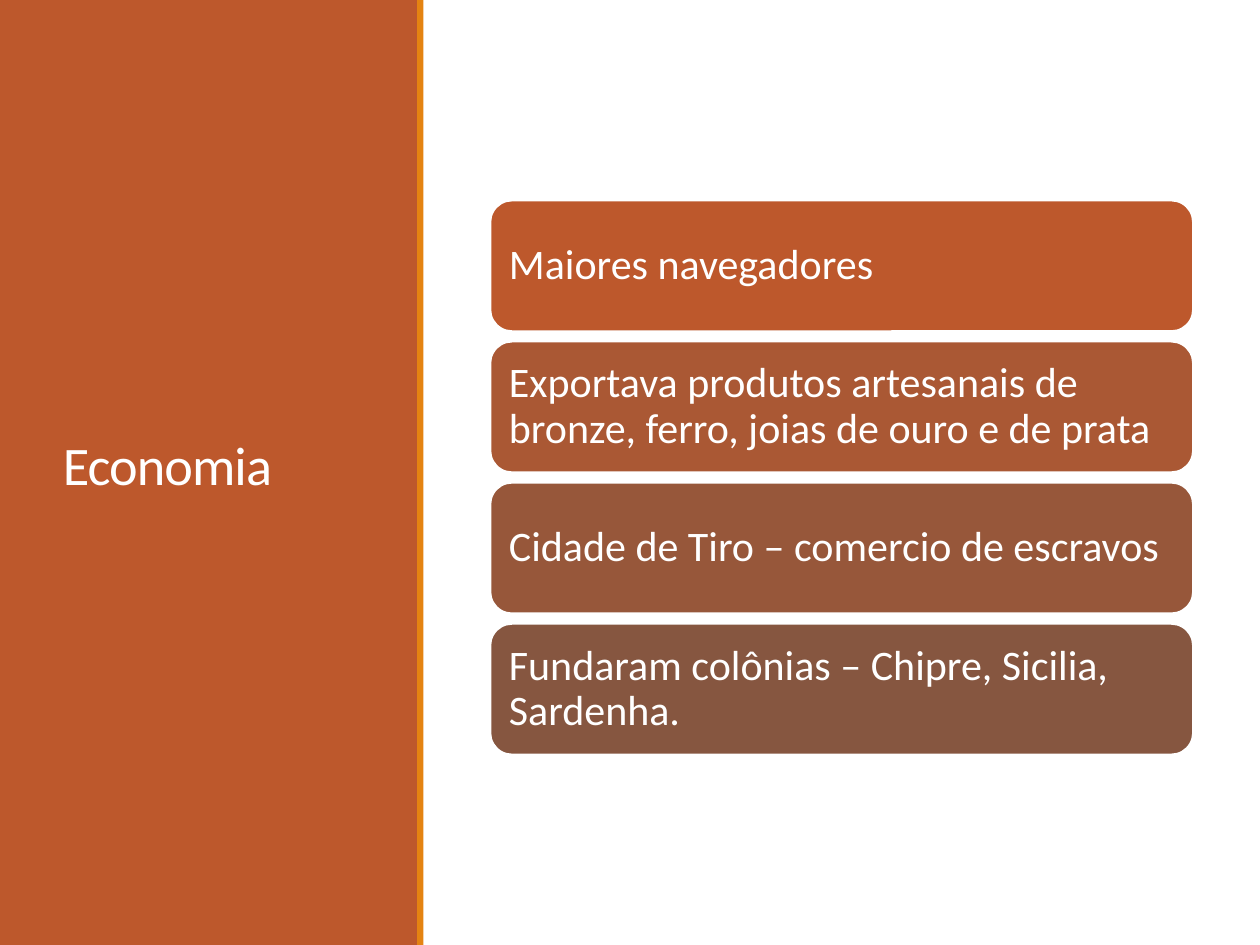
from pptx import Presentation
from pptx.dml.color import RGBColor
from pptx.enum.shapes import MSO_SHAPE
from pptx.enum.text import MSO_ANCHOR, PP_ALIGN
from pptx.util import Inches, Pt

WHITE = RGBColor(0xFF, 0xFF, 0xFF)
RUST = RGBColor(0xBD, 0x58, 0x2C)
AMBER = RGBColor(0xE4, 0x83, 0x12)
CLAY = RGBColor(0xAA, 0x58, 0x34)
BROWN = RGBColor(0x97, 0x57, 0x3A)
UMBER = RGBColor(0x86, 0x56, 0x40)

CARDS = [
    ("Maiores navegadores", RUST),
    ("Exportava produtos artesanais de bronze, ferro, joias de ouro e de prata", CLAY),
    ("Cidade de Tiro – comercio de escravos", BROWN),
    ("Fundaram colônias – Chipre, Sicilia, Sardenha.", UMBER),
]


class Deck:
    """Holds the text style and the current slide."""

    font = {"name": "Calibri"}
    frame = {"word_wrap": True, "vertical_anchor": MSO_ANCHOR.MIDDLE}

    def __init__(self, slide):
        self.slide = slide

    def apply(self, item, style):
        for key, value in style.items():
            setattr(item, key, value)

    def label(self, shape, text, size, lead):
        frame = shape.text_frame
        self.apply(frame, self.frame)
        para = frame.paragraphs[0]
        self.apply(para, {"alignment": PP_ALIGN.LEFT, "line_spacing": lead})
        run = para.add_run()
        run.text = text
        self.apply(run.font, {**self.font, "size": Pt(size)})
        run.font.color.rgb = WHITE
        return run

    def block(self, kind, box, fill):
        shape = self.slide.shapes.add_shape(kind, *map(Inches, box))
        shape.shadow.inherit = False
        shape.fill.solid()
        shape.fill.fore_color.rgb = fill
        return shape

    def bar(self, box, fill):
        self.block(MSO_SHAPE.RECTANGLE, box, fill).line.fill.background()

    def title(self, box, text):
        shape = self.slide.shapes.add_textbox(*map(Inches, box))
        run = self.label(shape, text, 31, 0.85)
        run._r.get_or_add_rPr().set("spc", "-50")

    def card(self, box, text, fill):
        shape = self.block(MSO_SHAPE.ROUNDED_RECTANGLE, box, fill)
        shape.line.color.rgb = WHITE
        shape.line.width = Pt(1.25)
        sides = ("left", "top", "right", "bottom")
        self.apply(shape.text_frame, {f"margin_{side}": Inches(0.1) for side in sides})
        self.label(shape, text, 24, 0.9)


def main():
    prs = Presentation()
    prs.slide_width, prs.slide_height = Inches(10), Inches(7.5)
    deck = Deck(prs.slides.add_slide(prs.slide_layouts[6]))
    deck.bar((0, 0, 3.32, 7.5), RUST)
    deck.title((0.4, 0.57, 2.53, 6.31), "Economia")
    deck.bar((3.31, 0, 0.05, 7.5), AMBER)
    for row, (text, fill) in enumerate(CARDS):
        deck.card((3.89, 1.59 + row * 1.12, 5.58, 1.04), text, fill)
    prs.save("out.pptx")


if __name__ == "__main__":
    main()
